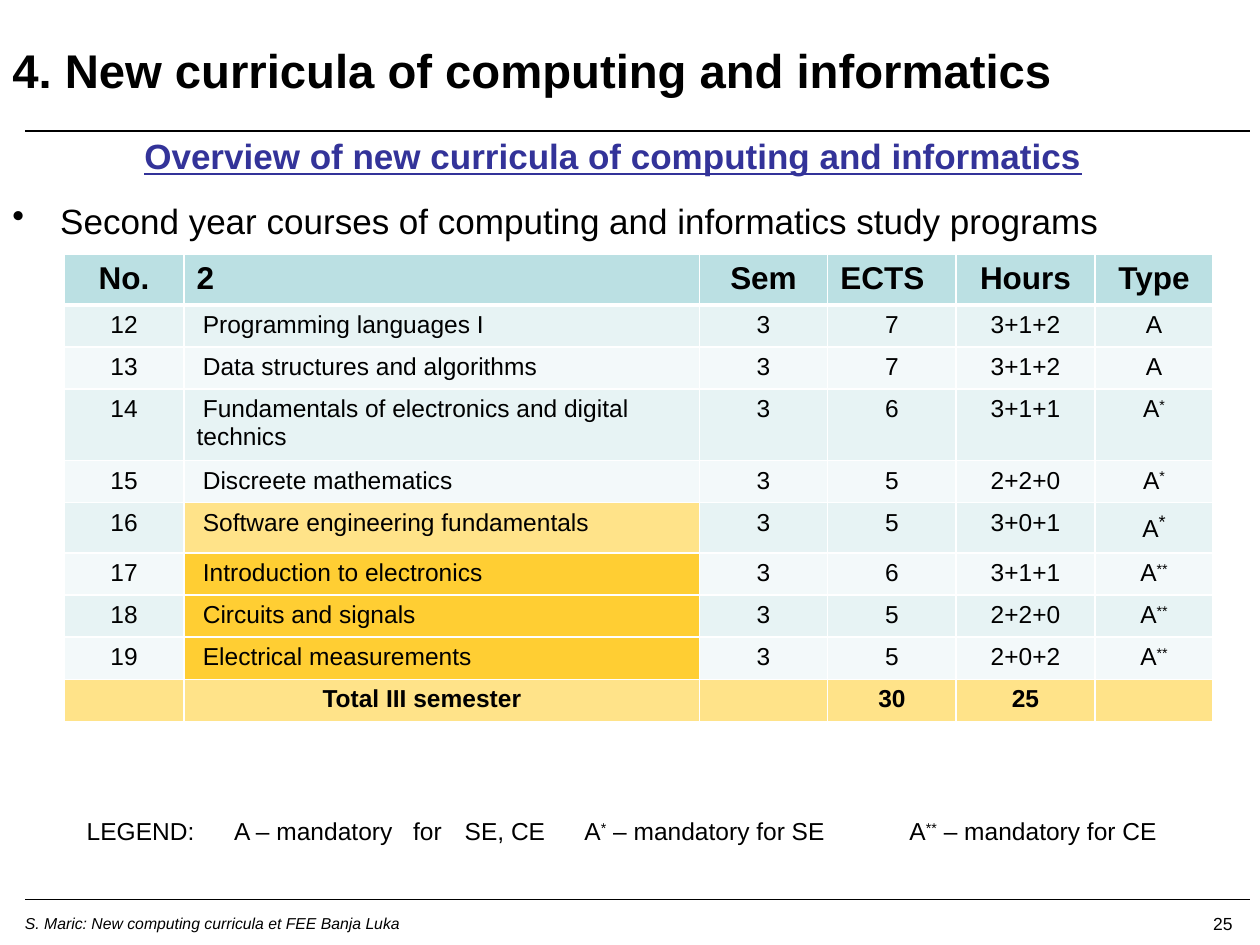
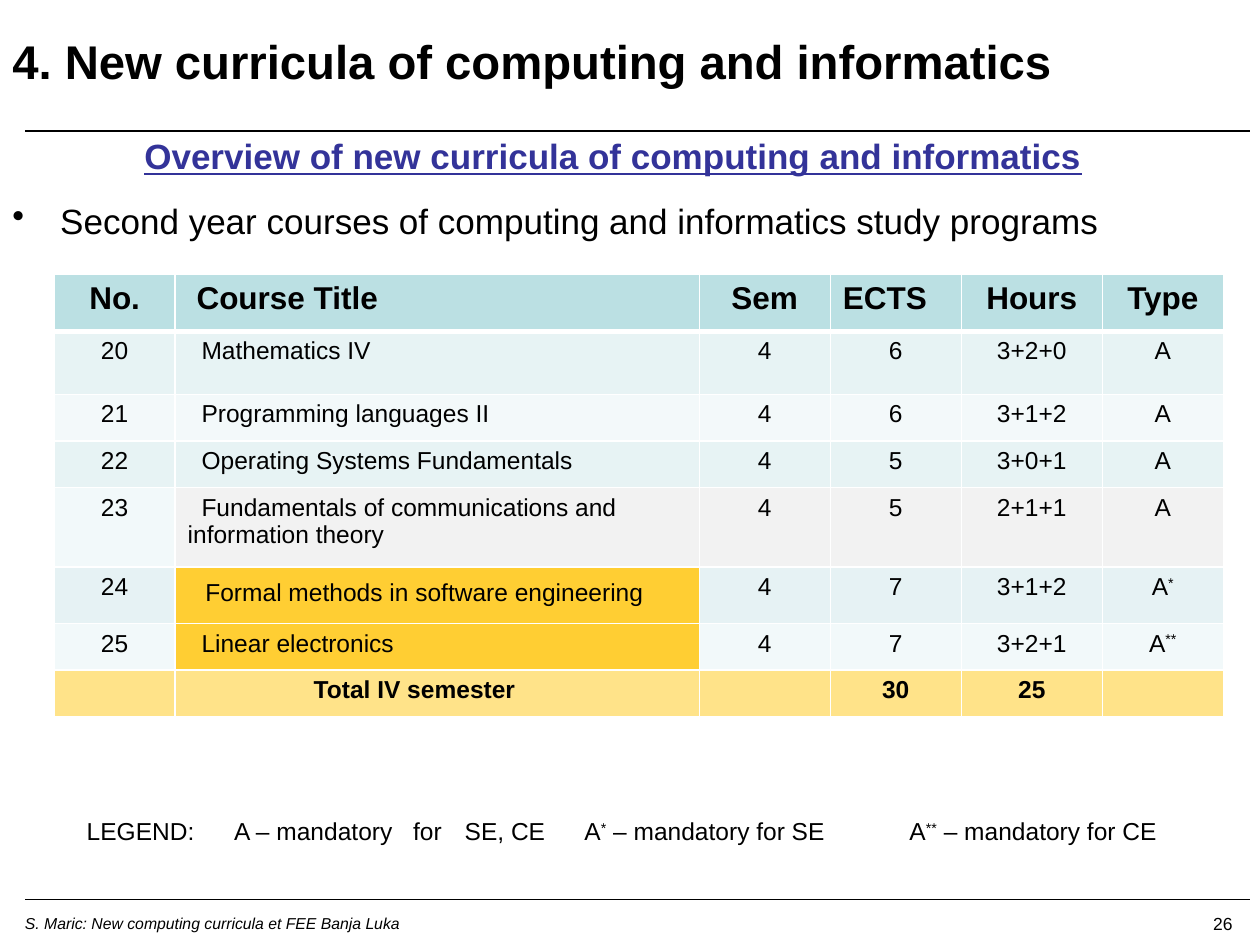
from lxml import etree
from pptx import Presentation
from pptx.dml.color import RGBColor
from pptx.enum.shapes import MSO_CONNECTOR
from pptx.enum.text import PP_ALIGN
from pptx.oxml.ns import qn
from pptx.util import Inches, Pt

LEFT, CENTER, RIGHT = PP_ALIGN.LEFT, PP_ALIGN.CENTER, PP_ALIGN.RIGHT
STRAIGHT = MSO_CONNECTOR.STRAIGHT
FONT = "Arial"
COLORS = {
    "text": "000000", "subtitle": "333399", "border": "FFFFFF",
    "header": "BBE0E3", "band_dark": "E7F3F4", "band_light": "F3F9FA",
    "soft_dark": "E6F2F4", "soft_light": "F2F9FA", "gray": "F2F2F2",
    "gold": "FFCE33", "pale_gold": "FFE389",
}
TITLE = "4. New curricula of computing and informatics"
SUBTITLE = "Overview of new curricula of computing and informatics"
BULLET = "Second year courses of computing and informatics study programs"
FOOTER = "S. Maric: New computing curricula et FEE Banja Luka"
LEGEND = ("LEGEND:\tA – mandatory\tfor\tSE, CE\tA^*^ – mandatory for SE"
          "\tA^**^ – mandatory for CE")
LEGEND_TABS = (1.17, 2.59, 3.0, 3.95, 6.53)
ALIGNMENTS = (CENTER, LEFT, CENTER, CENTER, CENTER, CENTER)
HEADER_ALIGNMENTS = (CENTER, LEFT, CENTER, LEFT, CENTER, CENTER)

THIRD_SEMESTER = {
    "page": 25, "title_top": 0.28, "semester": "3", "heading": "2",
    "total": "Total III semester", "box": (0.51, 2.02, 9.13, 3.51),
    "columns": (0.95, 4.09, 1.02, 1.02, 1.1, 0.94),
    "heights": (0.39, 0.32, 0.32, 0.53, 0.32, 0.38, 0.31, 0.31, 0.31, 0.32),
    "heading_indent": 0, "course_indent": 0.05,
    "courses": [
        ("12", "Programming languages I", "7", "3+1+2", "A", "band_dark", "band_dark"),
        ("13", "Data structures and algorithms", "7", "3+1+2", "A", "band_light", "band_light"),
        ("14", "Fundamentals of electronics and digital technics", "6", "3+1+1", "A^*",
         "band_dark", "band_dark"),
        ("15", "Discreete mathematics", "5", "2+2+0", "A^*", "band_light", "band_light"),
        ("16", "Software engineering fundamentals", "5", "3+0+1", "A^*",
         "band_dark", "pale_gold"),
        ("17", "Introduction to electronics", "6", "3+1+1", "A^**", "band_light", "gold"),
        ("18", "Circuits and signals", "5", "2+2+0", "A^**", "band_dark", "gold"),
        ("19", "Electrical measurements", "5", "2+0+2", "A^**", "band_light", "gold"),
    ],
}
FOURTH_SEMESTER = {
    "page": 26, "title_top": 0.21, "semester": "4", "heading": "Course Title",
    "total": "Total IV semester", "box": (0.43, 2.18, 9.29, 3.51),
    "columns": (0.96, 4.16, 1.04, 1.04, 1.12, 0.96),
    "heights": (0.45, 0.5, 0.37, 0.37, 0.63, 0.45, 0.37, 0.37),
    "heading_indent": 0.07, "course_indent": 0.11,
    "courses": [
        ("20", "Mathematics IV", "6", "3+2+0", "A", "band_dark", "band_dark"),
        ("21", "Programming languages II", "6", "3+1+2", "A", "band_light", "band_light"),
        ("22", "Operating Systems Fundamentals", "5", "3+0+1", "A", "band_dark", "band_dark"),
        ("23", "Fundamentals of communications and information theory", "5", "2+1+1", "A",
         "gray", "gray"),
        ("24", "Formal methods in software engineering", "7", "3+1+2", "A^*",
         "soft_dark", "gold"),
        ("25", "Linear electronics", "7", "3+2+1", "A^**", "soft_light", "gold"),
    ],
}


def color(name):
    """Return the named palette colour."""
    return RGBColor.from_string(COLORS[name])


def write(paragraph, text, size, alignment=LEFT, bold=False, italic=False, ink="text"):
    """Write text, raising the parts that stand between carets."""
    paragraph.alignment = alignment
    font = paragraph.font
    font.name, font.size, font.bold, font.italic = FONT, Pt(size), bold, italic
    font.color.rgb = color(ink)
    for index, part in enumerate(text.split("^")):
        if part:
            run = paragraph.add_run()
            run.text = part
            if index % 2:
                run._r.get_or_add_rPr().set("baseline", "30000")


def set_indent(paragraph, first_line, margin=0.0):
    """Set the left margin and first-line indent in inches."""
    properties = paragraph._p.get_or_add_pPr()
    properties.set("marL", str(Inches(margin)))
    properties.set("indent", str(Inches(first_line)))


def add_text_box(slide, box):
    """Add a wrapping text box and return its frame."""
    frame = slide.shapes.add_textbox(*map(Inches, box)).text_frame
    frame.word_wrap = True
    return frame


def add_rule(slide, top):
    """Draw a thin horizontal rule across the slide."""
    rule = slide.shapes.add_connector(
        STRAIGHT, Inches(0.2), Inches(top), Inches(9.92), Inches(top))
    rule.line.color.rgb = color("text")
    rule.line.width = Pt(0.75)
    etree.SubElement(rule._element.spPr, qn("a:effectLst"))


def add_frame(slide, title_top, page):
    """Add the title, rules, footer and page number."""
    for top in (1.04, 7.14):
        add_rule(slide, top)
    title = add_text_box(slide, (0, title_top, 8.54, 0.56))
    write(title.paragraphs[0], TITLE, 27, bold=True)
    footer = add_text_box(slide, (0.1, 7.2, 7.17, 0.25))
    write(footer.paragraphs[0], FOOTER, 9, italic=True)
    number = add_text_box(slide, (8.15, 7.2, 1.73, 0.24))
    write(number.paragraphs[0], str(page), 10, RIGHT)


def add_body(slide, box):
    """Add the underlined subtitle and the bulleted line."""
    frame = add_text_box(slide, box)
    frame.margin_top = Inches(0.08)
    subtitle = frame.paragraphs[0]
    write(subtitle, SUBTITLE, 20, CENTER, bold=True, ink="subtitle")
    subtitle.font.underline = True
    subtitle.space_after = Pt(13)
    bullet = frame.add_paragraph()
    set_indent(bullet, -0.38, 0.38)
    etree.SubElement(bullet._p.get_or_add_pPr(), qn("a:buChar"), char="•")
    write(bullet, BULLET, 20)


def add_legend(slide, box):
    """Add the legend with its entries on tab stops."""
    paragraph = add_text_box(slide, box).paragraphs[0]
    tabs = etree.SubElement(paragraph._p.get_or_add_pPr(), qn("a:tabLst"))
    for position in LEGEND_TABS:
        etree.SubElement(tabs, qn("a:tab"), pos=str(Inches(position)), algn="l")
    write(paragraph, LEGEND, 14)


def set_borders(cell, top, bottom):
    """Give a cell white borders with the given top and bottom widths."""
    properties = cell._tc.get_or_add_tcPr()
    sides = (("lnL", 1), ("lnR", 1), ("lnT", top), ("lnB", bottom))
    for index, (side, width) in enumerate(sides):
        line = etree.Element(qn(f"a:{side}"), w=str(Pt(width)))
        fill = etree.SubElement(line, qn("a:solidFill"))
        etree.SubElement(fill, qn("a:srgbClr"), val=COLORS["border"])
        properties.insert(index, line)


def fill_row(table, row, values, fills, alignments, size, bold, indent):
    """Write and format one table row."""
    for column, (value, fill, alignment) in enumerate(zip(values, fills, alignments)):
        cell = table.cell(row, column)
        cell.fill.solid()
        cell.fill.fore_color.rgb = color(fill)
        set_borders(cell, 3 if row == 1 else 1, 3 if row == 0 else 1)
        paragraph = cell.text_frame.paragraphs[0]
        if column == 1:
            set_indent(paragraph, indent)
        write(paragraph, value, size, alignment, bold)


def add_course_table(slide, semester):
    """Add the table of one semester's courses."""
    heights, columns = semester["heights"], semester["columns"]
    table = slide.shapes.add_table(
        len(heights), len(columns), *map(Inches, semester["box"])).table
    table.first_row = table.horz_banding = False
    for column, width in zip(table.columns, columns):
        column.width = Inches(width)
    for row, height in zip(table.rows, heights):
        row.height = Inches(height)
    headings = ("No.", semester["heading"], "Sem", "ECTS", "Hours", "Type")
    fill_row(table, 0, headings, ["header"] * 6, HEADER_ALIGNMENTS, 18, True,
             semester["heading_indent"])
    for row, course in enumerate(semester["courses"], 1):
        number, name, credits, hours, kind, base, highlight = course
        values = (number, name, semester["semester"], credits, hours, kind)
        fill_row(table, row, values, [base, highlight] + [base] * 4, ALIGNMENTS, 14,
                 False, semester["course_indent"])
    totals = ("", semester["total"], "", "30", "25", "")
    fill_row(table, len(heights) - 1, totals, ["pale_gold"] * 6, ALIGNMENTS, 14, True, 1)
    return table


def add_semester_slide(presentation, semester):
    """Add one semester slide and return its table."""
    slide = presentation.slides.add_slide(presentation.slide_layouts[6])
    add_frame(slide, semester["title_top"], semester["page"])
    add_body(slide, (0, 0.99, 9.73, 6.51))
    table = add_course_table(slide, semester)
    add_legend(slide, (0.59, 6.43, 8.9, 0.34))
    return table


def main():
    """Build and save the presentation."""
    presentation = Presentation()
    presentation.slide_width, presentation.slide_height = Inches(10), Inches(7.5)
    third_table = add_semester_slide(presentation, THIRD_SEMESTER)
    third_table.cell(5, 5).text_frame.paragraphs[0].runs[1].font.size = Pt(18)
    fourth_table = add_semester_slide(presentation, FOURTH_SEMESTER)
    fourth_table.cell(4, 0).fill.fore_color.rgb = color("soft_light")
    formal_methods = fourth_table.cell(5, 1)
    formal_methods.margin_top = Inches(0.1)
    set_indent(formal_methods.text_frame.paragraphs[0], 0.14)
    presentation.save("out.pptx")


if __name__ == "__main__":
    main()
